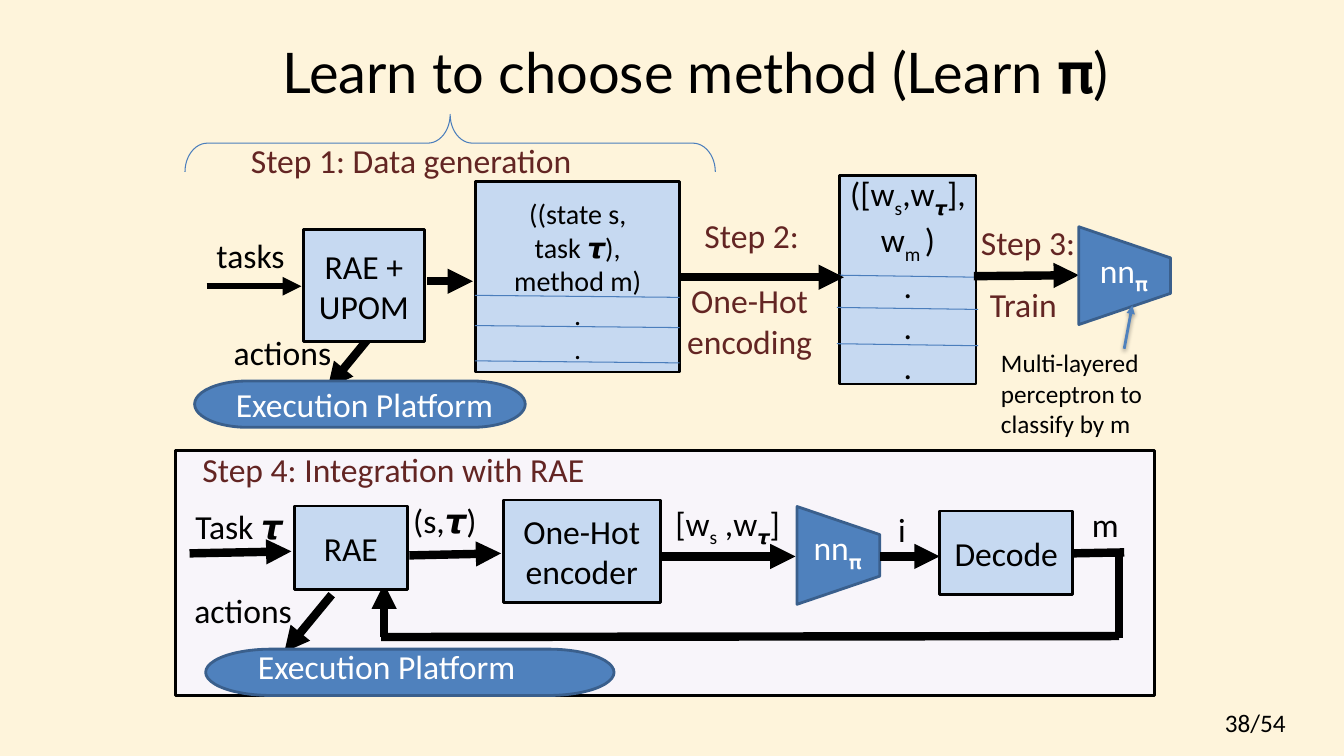
from dataclasses import dataclass

from lxml import etree
from pptx import Presentation
from pptx.dml.color import RGBColor
from pptx.enum.shapes import MSO_CONNECTOR, MSO_SHAPE
from pptx.enum.text import MSO_ANCHOR, PP_ALIGN
from pptx.oxml.ns import qn
from pptx.slide import Slide
from pptx.util import Inches, Pt

STRAIGHT = MSO_CONNECTOR.STRAIGHT
RECTANGLE = MSO_SHAPE.RECTANGLE
TERMINATOR = MSO_SHAPE.FLOWCHART_TERMINATOR
TRAPEZOID = MSO_SHAPE.TRAPEZOID
BRACE = MSO_SHAPE.RIGHT_BRACE
LEFT, CENTER = PP_ALIGN.LEFT, PP_ALIGN.CENTER
TOP, MIDDLE = MSO_ANCHOR.TOP, MSO_ANCHOR.MIDDLE

CREAM, LILAC, PALE_BLUE = "FEF4DB", "F8F5FA", "C6D9F1"
BLUE, DARK_BLUE, RULE_BLUE = "4F81BD", "3A5F8C", "4B7EBC"
BLACK, WHITE, MAROON = "000000", "FFFFFF", "632523"
LABEL_HEIGHT = 0.5


def color(value):
    return RGBColor.from_string(value)


def add_span(para, text, size, ink, font="Calibri", subscript=False):
    span = para.add_run()
    span.text = text
    span.font.name = font
    span.font.size = Pt(size)
    span.font.color.rgb = color(ink)
    if subscript:
        span.font._element.set("baseline", "-25000")


def write(frame, text, size=24, ink=BLACK, align=LEFT, anchor=TOP, inset=0.1, top_inset=0.05):
    """Fill a text frame; parts between underscores become subscripts."""
    frame.word_wrap = True
    frame.vertical_anchor = anchor
    frame.margin_left = frame.margin_right = Inches(inset)
    frame.margin_top = Inches(top_inset)
    for index, line in enumerate(text.split("\n")):
        para = frame.paragraphs[0] if index == 0 else frame.add_paragraph()
        para.alignment = align
        for part, piece in enumerate(line.split("_")):
            if piece:
                add_span(para, piece, size, ink, subscript=part % 2 == 1)


@dataclass
class Region:
    """Part of the page whose lengths are measured from its top left corner."""
    page: Slide
    left: float
    top: float

    def place(self, left, top):
        return Inches(self.left + left), Inches(self.top + top)

    def label(self, text, left, top, width, height=LABEL_HEIGHT, **style):
        box = self.page.shapes.add_textbox(*self.place(left, top), Inches(width), Inches(height))
        write(box.text_frame, text, **style)
        return box

    def shape(self, kind, left, top, width, height, fill=None, edge=BLACK, weight=2):
        shape = self.page.shapes.add_shape(
            kind, *self.place(left, top), Inches(width), Inches(height))
        shape.shadow.inherit = False
        if fill:
            shape.fill.solid()
            shape.fill.fore_color.rgb = color(fill)
        else:
            shape.fill.background()
        shape.line.color.rgb = color(edge)
        shape.line.width = Pt(weight)
        return shape

    def block(self, text, left, top, width, height, **style):
        shape = self.shape(RECTANGLE, left, top, width, height, PALE_BLUE)
        write(shape.text_frame, text, **{"align": CENTER, "anchor": MIDDLE, **style})

    def line(self, start, end, ink=BLACK, weight=6, arrow=False, shadow=False):
        line = self.page.shapes.add_connector(STRAIGHT, *self.place(*start), *self.place(*end))
        line.line.color.rgb = color(ink)
        line.line.width = Pt(weight)
        properties = line._element.spPr
        if arrow:
            etree.SubElement(properties.find(qn("a:ln")), qn("a:tailEnd"), type="triangle")
        effects = etree.SubElement(properties, qn("a:effectLst"))
        if shadow:
            outer = etree.SubElement(effects, qn("a:outerShdw"), blurRad=str(Pt(3.1)),
                                     dist=str(Pt(1.6)), dir="5400000", rotWithShape="0")
            ink_node = etree.SubElement(outer, qn("a:srgbClr"), val=BLACK)
            etree.SubElement(ink_node, qn("a:alpha"), val="38000")

    def arrow(self, start, end, **style):
        self.line(start, end, arrow=True, **style)

    def row_rules(self, left, width, tops):
        for top in tops:
            self.line((left, top), (left + width, top + 0.02), ink=RULE_BLUE, weight=0.75)

    def network(self, left, top, height, label_offset):
        shape = self.shape(TRAPEZOID, left, top, 0.97, height, BLUE, DARK_BLUE)
        shape.rotation = 90
        shape.adjustments[0] = 0.34
        self.label("nn_𝛑_", left + 0.14, top + label_offset, 0.91, ink=WHITE)

    def platform(self, left, top, width, label_left, label_top):
        self.shape(TERMINATOR, left, top, width, 0.46, BLUE, DARK_BLUE)
        self.label("Execution Platform", label_left, label_top, 2.8, ink=WHITE)


def add_title(page):
    box = Region(page, 2.4, 0.08).label("", 0, 0, 9, 1.25, align=CENTER, anchor=MIDDLE)
    para = box.text_frame.paragraphs[0]
    for text, font in (("Learn to choose method (Learn ", "Lato"), ("𝛑", "Calibri"), (")", "Lato")):
        add_span(para, text, 40, BLACK, font)


def add_learning_steps(region):
    """Steps 1 to 3: from tasks to the trained network."""
    region.arrow((2.21, 2.29), (1.75, 2.85))
    region.arrow((0.55, 1.84), (1.49, 1.84), weight=4.5)
    region.block("RAE + UPOM", 1.51, 1.28, 1.2, 1.11)
    region.label("tasks", -0.49, 1.28, 2.95, align=CENTER)
    region.arrow((2.74, 1.79), (3.19, 1.79))
    region.block("((state s,\ntask 𝞽),\nmethod m)\n.\n.", 3.22, 0.8, 2.02, 1.89,
                 size=20, anchor=TOP, top_inset=0.15)
    region.row_rules(3.21, 2.03, (1.93, 2.23, 2.58))
    region.block("([w_s_,w_𝞽_],\nw_m _)\n.\n.\n.", 6.83, 0.74, 1.35, 2.07, inset=0)
    region.row_rules(6.8, 1.4, (1.73, 2.05, 2.41))
    region.arrow((5.24, 1.75), (6.87, 1.75))
    region.arrow((8.16, 1.74), (9.2, 1.73))
    region.network(9.17, 1.28, 0.91, 0.15)

    region.shape(BRACE, 2.68, -2.21, 0.57, 5.26, edge=RULE_BLUE, weight=0.75)
    brace = region.page.shapes[-1]
    brace.rotation = 270
    brace.adjustments[0] = 0.39
    region.label("Step 1: Data generation", 0.89, 0.34, 4.66, ink=MAROON)
    region.label("Step 2:", 4.48, 1.08, 2.95, ink=MAROON, align=CENTER)
    region.label("One-Hot\nencoding", 5.01, 1.73, 1.85, 0.91, ink=MAROON, align=CENTER)
    region.label("Step 3:", 8.13, 1.15, 1.51, ink=MAROON)
    region.label("Train", 8.22, 1.77, 1.51, ink=MAROON)

    region.platform(0.43, 2.78, 3.28, 0.74, 2.76)
    region.label("actions", 0.72, 2.24, 1.34)
    region.label("Multi-layered perceptron to classify by m", 8.33, 2.4, 1.97, 1.01, size=18)
    region.arrow((9.65, 2.46), (9.73, 2.03), ink=BLUE, weight=2, shadow=True)


def add_integration_step(region):
    """Step 4: the panel with the acting loop."""
    region.shape(RECTANGLE, 0, 0, 9.71, 2.43, LILAC)
    region.label("Step 4: Integration with RAE", 0.17, -0.07, 4.87, ink=MAROON)
    region.label("Task 𝞽", -0.08, 0.5, 1.42, align=CENTER)
    region.arrow((0.14, 1.02), (1.15, 1))
    region.network(6.09, 0.63, 0.82, 0.08)
    region.arrow((4.82, 1.05), (6.15, 1.05))
    region.label("(s,𝞽)", 2.26, 0.44, 1.2)
    region.label("[w_s_ ,w_𝞽_]", 4.86, 0.47, 1.6)
    region.arrow((2.32, 1.04), (3.23, 1.02))
    region.block("One-Hot encoder", 3.25, 0.49, 1.56, 1.02)
    region.arrow((6.99, 1.05), (7.58, 1.05))
    region.block("Decode", 7.58, 0.6, 1.32, 0.83)
    region.label("i", 7.07, 0.53, 0.81)
    region.label("m", 8.99, 0.48, 0.52)

    region.line((8.9, 1.02), (9.41, 1.01))
    region.line((9.36, 1.86), (9.36, 0.99))
    region.line((9.36, 1.84), (2.04, 1.85))
    region.arrow((2.07, 1.85), (2.07, 1.32))

    region.arrow((1.55, 1.43), (1.08, 2))
    region.platform(0.3, 1.97, 4.05, 0.72, 1.89)
    region.block("RAE", 1.18, 0.55, 1.12, 0.83)
    region.label("actions", 0.09, 1.33, 1.34)


def main():
    deck = Presentation()
    deck.slide_width, deck.slide_height = Inches(13.33), Inches(7.5)
    page = deck.slides.add_slide(deck.slide_layouts[6])
    page.background.fill.solid()
    page.background.fill.fore_color.rgb = color(CREAM)
    add_title(page)
    add_learning_steps(Region(page, 1.5, 1))
    add_integration_step(Region(page, 1.74, 4.47))
    Region(page, 12.05, 6.97).label("38/54", 0, 0, 1.23, 0.4, size=18)
    deck.save("out.pptx")


if __name__ == "__main__":
    main()
